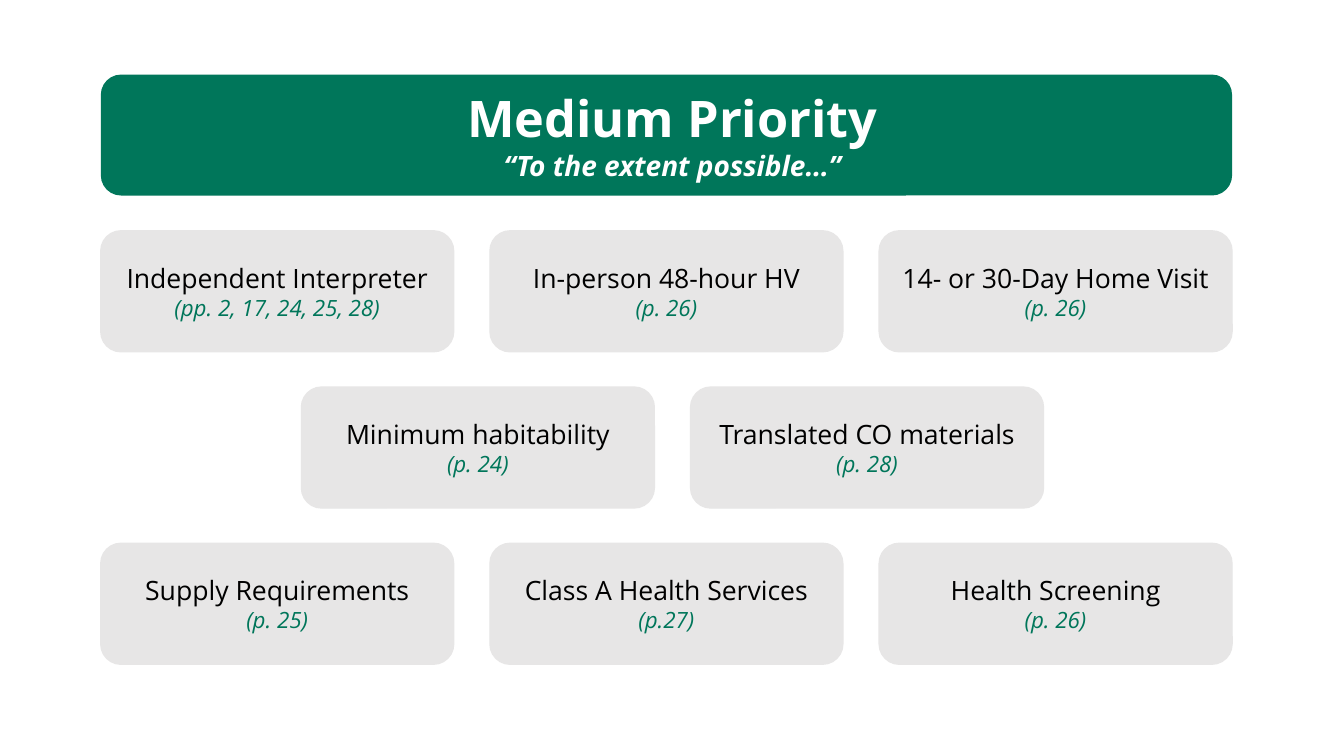
import pptx
import pptx.util
import pptx.dml.color
import pptx.enum.shapes
import pptx.enum.text


def paint(code):
    return pptx.dml.color.RGBColor.from_string(code)


class Deck:
    """Holds the style and the current slide."""

    font = "Open Sans"
    green = "00765A"
    gray = "E7E6E6"
    black = "000000"
    white = "FFFFFF"

    def __init__(self, slide):
        self.slide = slide

    def fill_text(self, frame, lines):
        frame.word_wrap = True
        for i, (text, size, color, bold, slant) in enumerate(lines):
            para = frame.paragraphs[0] if i == 0 else frame.add_paragraph()
            para.alignment = pptx.enum.text.PP_ALIGN.CENTER
            run = para.add_run()
            run.text = text
            run.font.name = self.font
            run.font.size = pptx.util.Pt(size)
            run.font.bold = bold
            run.font.italic = slant
            run.font.color.rgb = paint(color)

    def box(self, place, fill, edge=None):
        shape = self.slide.shapes.add_shape(
            pptx.enum.shapes.MSO_SHAPE.ROUNDED_RECTANGLE,
            *map(pptx.util.Inches, place))
        shape.shadow.inherit = False
        shape.fill.solid()
        shape.fill.fore_color.rgb = paint(fill)
        if edge:
            shape.line.color.rgb = paint(edge)
            shape.line.width = pptx.util.Pt(1)
        else:
            shape.line.fill.background()
        return shape

    def card(self, place, title, pages):
        frame = self.box(place, self.gray, self.gray).text_frame
        frame.vertical_anchor = pptx.enum.text.MSO_ANCHOR.MIDDLE
        self.fill_text(frame, [(title, 19, self.black, False, False),
                               (pages, 16, self.green, False, True)])

    def label(self, place, lines):
        frame = self.slide.shapes.add_textbox(
            *map(pptx.util.Inches, place)).text_frame
        self.fill_text(frame, lines)
        frame.auto_size = pptx.enum.text.MSO_AUTO_SIZE.SHAPE_TO_FIT_TEXT


def main():
    show = pptx.Presentation()
    show.slide_width = pptx.util.Inches(13.33)
    show.slide_height = pptx.util.Inches(7.5)
    deck = Deck(show.slides.add_slide(show.slide_layouts[6]))

    deck.box((1, 0.74, 11.22, 1.2), deck.green)

    rows = [
        (1, [("Independent Interpreter", "(pp. 2, 17, 24, 25, 28)"),
             ("In-person 48-hour HV", "(p. 26)"),
             ("14- or 30-Day Home Visit", "(p. 26)")]),
        (2.99, [("Minimum habitability", "(p. 24)"),
                ("Translated CO materials", "(p. 28)")]),
        (1, [("Supply Requirements", "(p. 25)"),
             ("Class A Health Services", "(p.27)"),
             ("Health Screening", "(p. 26)")]),
    ]
    for row, (left, cards) in enumerate(rows):
        for col, (title, pages) in enumerate(cards):
            place = (left + col * 3.86, 2.29 + row * 1.55, 3.5, 1.2)
            deck.card(place, title, pages)

    deck.label((3.31, 0.82, 6.72, 1.04), [
        ("Medium Priority", 36, deck.white, True, False),
        ("“To the extent possible…”", 20, deck.white, True, True)])

    show.save("out.pptx")


if __name__ == "__main__":
    main()
